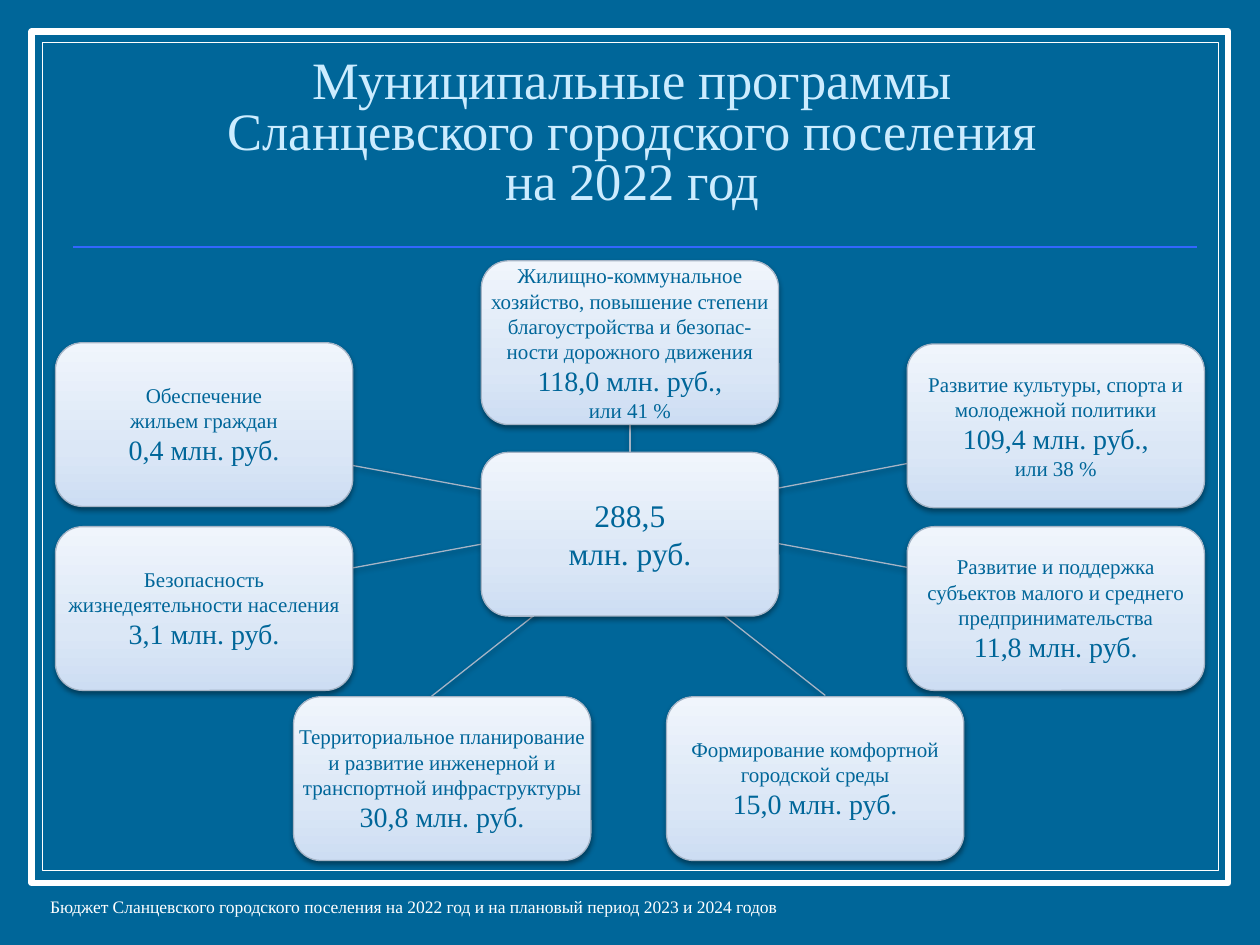
from copy import deepcopy
from dataclasses import dataclass

from lxml import etree
from pptx import Presentation
from pptx.dml.color import RGBColor
from pptx.enum import shapes, text
from pptx.oxml import ns
from pptx.util import Inches, Pt


@dataclass(frozen=True)
class Theme:
    font: str = "Times New Roman"
    base: str = "006699"
    white: str = "FFFFFF"
    title: str = "CCECFF"
    rule: str = "3366FF"
    edge: str = "A5B4C6"
    shade: str = "000000"
    grad: tuple = ((0, "CDDDF3"), (0.35, "DBE7F6"), (1, "F0F5FC"))
    head: int = 30
    total: int = 18
    sum: int = 16
    body: int = 12
    foot: int = 10


T = Theme()
SIZE = (2.36, 1.3)
HUB = (3.82, 3.59)
LEFT, RIGHT, LOW = 0.44, 7.2, 5.53

# corner, spoke from, spoke to, wrap, paragraphs (text, size)
CARDS = [
    ((HUB[0], 2.07), (5, 3.94), (5, 3.17), True, [
        ("Жилищно-коммунальное хозяйство, повышение степени "
         "благоустройства и безопас-ности дорожного движения", T.body),
        ("118,0 млн. руб.,", T.sum), ("или 41 %", T.body)]),
    ((LEFT, 2.72), (4.13, 3.94), (2.45, 3.63), True, [
        ("Обеспечение\nжильем граждан", T.body), ("0,4 млн. руб.", T.sum)]),
    ((LEFT, 4.18), (4.14, 4.26), (2.46, 4.57), True, [
        ("Безопасность жизнедеятельности населения", T.body),
        ("3,1 млн. руб.", T.sum)]),
    ((2.33, LOW), (4.46, 4.71), (3.42, LOW), False, [
        ("Территориальное планирование\nи развитие инженерной и\n"
         "транспортной инфраструктуры", T.body), ("30,8 млн. руб.", T.sum)]),
    ((5.29, LOW), (5.51, 4.7), (6.55, 5.52), False, [
        ("Формирование комфортной\nгородской среды", T.body),
        ("15,0 млн. руб.", T.sum)]),
    ((RIGHT, 4.18), (5.83, 4.25), (7.51, 4.56), False, [
        ("Развитие и поддержка", T.body),
        ("субъектов малого и среднего", T.body),
        ("предпринимательства", T.body), ("11,8 млн. руб.", T.sum)]),
    ((RIGHT, 2.73), (5.83, 3.94), (7.51, 3.62), False, [
        ("Развитие культуры, спорта и", T.body),
        ("молодежной политики", T.body),
        ("109,4 млн. руб.,", T.sum), ("или 38 %", T.body)]),
]
TOTAL = [("288,5", T.total), ("млн. руб.", T.total)]


def rgb(code):
    return RGBColor.from_string(code)


def stroke(line, color, width):
    line.color.rgb = rgb(color)
    line.width = Pt(width)


def effect(shape, shadow):
    """Give the shape a soft drop shadow, or an empty effect list."""
    old = shape._element.spPr.find(ns.qn("a:effectLst"))
    if old is not None:
        shape._element.spPr.remove(old)
    box = etree.SubElement(shape._element.spPr, ns.qn("a:effectLst"))
    if shadow:
        drop = etree.SubElement(box, ns.qn("a:outerShdw"), blurRad="40000",
                                dist="20000", dir="5400000", rotWithShape="0")
        tint = etree.SubElement(drop, ns.qn("a:srgbClr"), val=T.shade)
        etree.SubElement(tint, ns.qn("a:alpha"), val="38000")


def write(frame, paras, color, align, space=None, **form):
    for name, value in form.items():
        setattr(frame, name, value)
    for i, (words, size) in enumerate(paras):
        para = frame.paragraphs[0] if i == 0 else frame.add_paragraph()
        para.text = words.replace("\n", "\v")
        para.alignment = align
        if space:
            para.line_spacing = space
        for run in para.runs:
            look = {"name": T.font, "size": Pt(size)}
            for name, value in look.items():
                setattr(run.font, name, value)
            run.font.color.rgb = rgb(color)
        for gap in para._p.findall(ns.qn("a:br")):
            etree.SubElement(gap, ns.qn("a:rPr"), sz=str(size * 100))


def label(slide, box, paras, color, align, space=None):
    frame = slide.shapes.add_textbox(*map(Inches, box)).text_frame
    write(frame, paras, color, align, space, word_wrap=True,
          vertical_anchor=text.MSO_ANCHOR.BOTTOM)


def link(slide, start, end, color, width, shadow=False):
    line = slide.shapes.add_connector(
        shapes.MSO_CONNECTOR.STRAIGHT, *map(Inches, (*start, *end)))
    stroke(line.line, color, width)
    effect(line, shadow)


def border(slide, box, width):
    rect = slide.shapes.add_shape(
        shapes.MSO_SHAPE.RECTANGLE, *map(Inches, box))
    rect.shadow.inherit = False
    rect.fill.solid()
    rect.fill.fore_color.rgb = rgb(T.base)
    stroke(rect.line, T.white, width)


def card(slide, box, paras, wrap):
    shape = slide.shapes.add_shape(
        shapes.MSO_SHAPE.ROUNDED_RECTANGLE, *map(Inches, box))
    shape.fill.gradient()
    shape.fill.gradient_angle = 90
    stops = shape._element.spPr.find(".//" + ns.qn("a:gsLst"))
    stops.append(deepcopy(stops[0]))
    for stop, (place, color) in zip(shape.fill.gradient_stops, T.grad):
        stop.position = place
        stop.color.rgb = rgb(color)
    stroke(shape.line, T.edge, 0.75)
    effect(shape, True)
    sides = ("left", "top", "right", "bottom")
    write(shape.text_frame, paras, T.base, text.PP_ALIGN.CENTER,
          word_wrap=wrap, vertical_anchor=text.MSO_ANCHOR.MIDDLE,
          **{f"margin_{side}": 0 for side in sides})


def backdrop(slide):
    slide.background.fill.solid()
    slide.background.fill.fore_color.rgb = rgb(T.base)
    border(slide, (0.25, 0.25, 9.5, 6.76), 3.5)
    border(slide, (0.34, 0.34, 9.33, 6.57), 0.75)
    link(slide, (0.58, 1.96), (9.5, 1.96), T.rule, 1)


def diagram(slide):
    """Draw the spokes first, so that the cards cover their ends."""
    for _, start, end, _, _ in CARDS:
        link(slide, start, end, T.edge, 0.75, True)
    card(slide, HUB + SIZE, TOTAL, False)
    for corner, _, _, wrap, paras in CARDS:
        card(slide, corner + SIZE, paras, wrap)


def main():
    deck = Presentation()
    deck.slide_width, deck.slide_height = Inches(10), Inches(7.5)
    slide = deck.slides.add_slide(deck.slide_layouts[6])
    backdrop(slide)
    label(slide, (0.3, 6.83, 9.39, 0.5),
          [("Бюджет Сланцевского городского поселения на 2022 год "
            "и на плановый период 2023 и 2024 годов", T.foot)],
          T.white, text.PP_ALIGN.LEFT)
    label(slide, (0.56, 0.69, 8.92, 1.03),
          [("Муниципальные программы\nСланцевского городского поселения\n"
            "на 2022 год", T.head)], T.title, text.PP_ALIGN.CENTER, 0.8)
    diagram(slide)
    deck.save("out.pptx")


if __name__ == "__main__":
    main()
